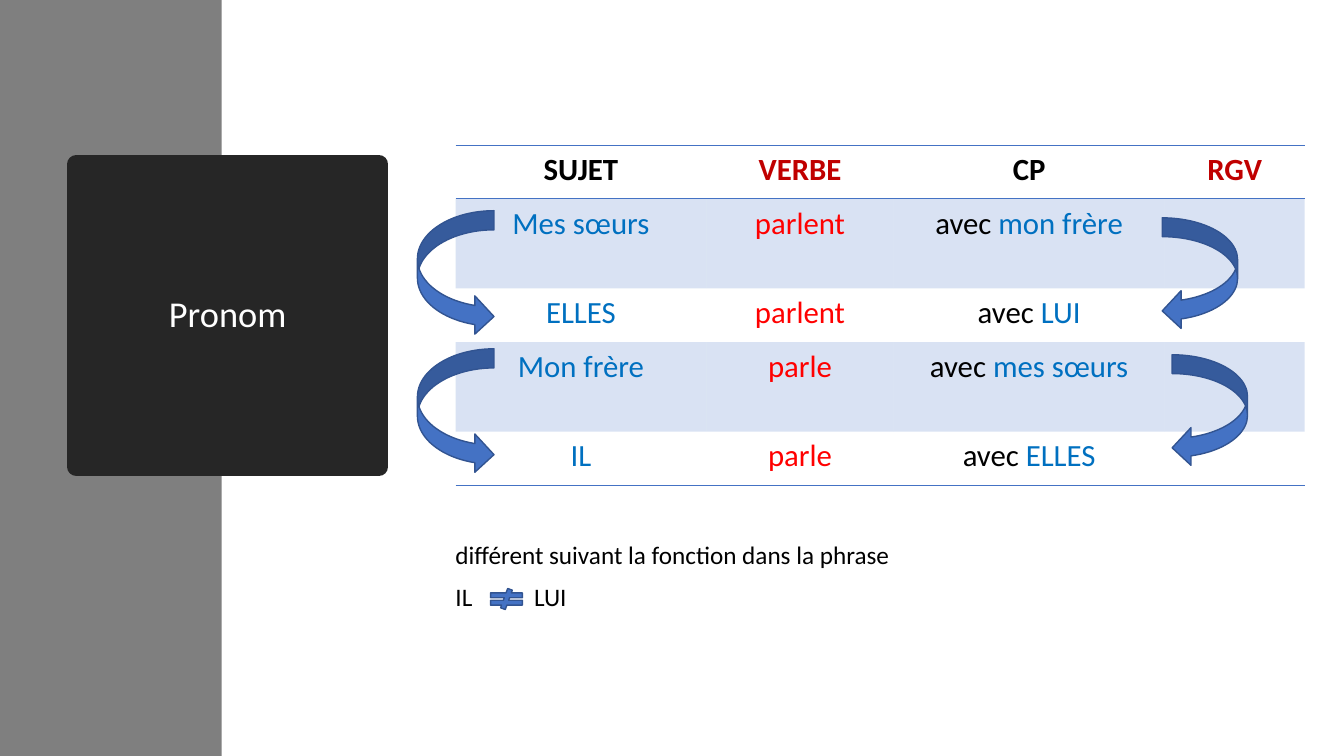
from lxml import etree
from pptx import Presentation
from pptx.dml.color import RGBColor
from pptx.enum.shapes import MSO_SHAPE
from pptx.enum.text import MSO_ANCHOR, PP_ALIGN
from pptx.oxml.ns import qn
from pptx.util import Cm, Pt

RECTANGLE = MSO_SHAPE.RECTANGLE
LEFT_ARROW = MSO_SHAPE.CURVED_LEFT_ARROW
RIGHT_ARROW = MSO_SHAPE.CURVED_RIGHT_ARROW
NOT_EQUAL = MSO_SHAPE.MATH_NOT_EQUAL
CENTER = PP_ALIGN.CENTER
LEFT = PP_ALIGN.LEFT
MIDDLE = MSO_ANCHOR.MIDDLE

GREY = RGBColor(0x7F, 0x7F, 0x7F)
DARK = RGBColor(0x26, 0x26, 0x26)
WHITE = RGBColor(0xFF, 0xFF, 0xFF)
BLACK = RGBColor(0, 0, 0)
ACCENT = RGBColor(0x44, 0x72, 0xC4)
OUTLINE = RGBColor(0x32, 0x54, 0x91)
BLUE = RGBColor(0x00, 0x70, 0xC0)
RED = RGBColor(0xFF, 0, 0)
DARK_RED = RGBColor(0xC0, 0, 0)

FONT = "Calibri"
PLAIN_TABLE_STYLE = "{2D5ABB26-0587-4C30-8999-92F81FD0307C}"
COLUMN_WIDTHS = (6.32, 4.72, 6.83, 3.53)
ROW_HEIGHTS = (1.35, 2.26, 1.35, 2.26, 1.35)
HEADINGS = (("SUJET", BLACK), ("VERBE", DARK_RED), ("CP", BLACK), ("RGV", DARK_RED))
SENTENCES = (
    ("Mes sœurs", "parlent", "mon frère"),
    ("ELLES", "parlent", "LUI"),
    ("Mon frère", "parle", "mes sœurs"),
    ("IL", "parle", "ELLES"),
)
NOTES = ("différent suivant la fonction dans la phrase", "IL\tLUI")


def format_run(run, size, color, bold=False):
    """Set the font of a run."""
    run.font.name = FONT
    run.font.size = Pt(size)
    run.font.bold = bold
    run.font.color.rgb = color


def add_filled_shape(slide, kind, box, fill, line=None, line_width=1):
    """Add a flat preset shape in a box given in centimetres."""
    shape = slide.shapes.add_shape(kind, *map(Cm, box))
    shape.shadow.inherit = False
    shape.fill.solid()
    shape.fill.fore_color.rgb = fill
    if line is None:
        shape.line.fill.background()
    else:
        shape.line.color.rgb = line
        shape.line.width = Pt(line_width)
    return shape


def add_title(slide, box):
    """Add the dark title block with its rounded outline."""
    shape = add_filled_shape(slide, RECTANGLE, box, DARK, DARK, 13.75)
    outline = shape.element.spPr.find(qn("a:ln"))
    etree.SubElement(outline, qn("a:round"))
    text_frame = shape.text_frame
    text_frame.text = "Pronom"
    text_frame.word_wrap = True
    text_frame.vertical_anchor = MIDDLE
    paragraph = text_frame.paragraphs[0]
    paragraph.alignment = CENTER
    paragraph.line_spacing = 0.9
    format_run(paragraph.runs[0], 26, WHITE)


def add_notes(slide, box):
    """Add the closing remark with its inequality sign."""
    left, top = box[:2]
    text_frame = slide.shapes.add_textbox(*map(Cm, box)).text_frame
    text_frame.word_wrap = True
    text_frame.text = "\n".join(NOTES)
    for paragraph in text_frame.paragraphs:
        paragraph.alignment = LEFT
        paragraph.line_spacing = 0.9
        paragraph.space_before = Pt(10)
        format_run(paragraph.runs[0], 18, BLACK)
    properties = text_frame.paragraphs[-1]._p.get_or_add_pPr()
    tabs = etree.SubElement(properties, qn("a:tabLst"))
    etree.SubElement(tabs, qn("a:tab"), pos=str(Cm(1.98)), algn="l")
    add_filled_shape(slide, NOT_EQUAL, (left + 0.99, top + 1.27, 1.09, 0.53), ACCENT, OUTLINE)


def add_border(cell, side):
    """Draw a thin accent border on the side of a cell."""
    border = etree.Element(qn(f"a:{side}"), w=str(Pt(1)))
    fill = etree.SubElement(border, qn("a:solidFill"))
    etree.SubElement(fill, qn("a:srgbClr"), val=str(ACCENT))
    cell._tc.get_or_add_tcPr().insert(0, border)


def style_cell(cell, row):
    """Set margins, shading and borders according to the row."""
    cell.margin_left = cell.margin_right = Cm(0.3)
    cell.margin_top = cell.margin_bottom = Cm(0.15)
    if row % 2:
        cell.fill.solid()
        cell.fill.fore_color.rgb = ACCENT
        color = cell._tc.tcPr.find(f".//{qn('a:srgbClr')}")
        etree.SubElement(color, qn("a:alpha"), val="20000")
    else:
        cell.fill.background()
    if row in (0, len(ROW_HEIGHTS) - 1):
        add_border(cell, "lnB")
    if row == 0:
        add_border(cell, "lnT")


def fill_cell(cell, parts, bold):
    """Write coloured text parts centred in a cell."""
    paragraph = cell.text_frame.paragraphs[0]
    paragraph.alignment = CENTER
    for text, color in parts:
        run = paragraph.add_run()
        run.text = text
        format_run(run, 22, color, bold)


def add_sentence_table(slide, left, top):
    """Add the table of sentences and the arrows from nouns to pronouns."""
    table = slide.shapes.add_table(
        len(ROW_HEIGHTS), len(COLUMN_WIDTHS), Cm(left), Cm(top),
        Cm(sum(COLUMN_WIDTHS)), Cm(sum(ROW_HEIGHTS))).table
    table._tbl.tblPr.find(qn("a:tableStyleId")).text = PLAIN_TABLE_STYLE
    for column, width in zip(table.columns, COLUMN_WIDTHS):
        column.width = Cm(width)
    rows = [[[heading] for heading in HEADINGS]]
    for subject, verb, complement in SENTENCES:
        rows.append([[(subject, BLUE)], [(verb, RED)],
                     [("avec ", BLACK), (complement, BLUE)], []])
    for index, (cells, height) in enumerate(zip(rows, ROW_HEIGHTS)):
        table.rows[index].height = Cm(height)
        for cell, parts in zip(table.rows[index].cells, cells):
            style_cell(cell, index)
            fill_cell(cell, parts, index == 0)

    arrows = (
        (LEFT_ARROW, 17.81, 1.83, 1.9, 2.82),
        (LEFT_ARROW, 18.06, 5.28, 1.9, 2.82),
        (RIGHT_ARROW, -0.96, 1.65, 1.93, 3.15),
        (RIGHT_ARROW, -0.96, 5.13, 1.93, 3.15),
    )
    for kind, across, down, width, height in arrows:
        add_filled_shape(slide, kind, (left + across, top + down, width, height), ACCENT, OUTLINE)


def main():
    """Build and save the slide."""
    presentation = Presentation()
    presentation.slide_width = Cm(33.87)
    presentation.slide_height = Cm(19.05)
    slide = presentation.slides.add_slide(presentation.slide_layouts[6])
    add_filled_shape(slide, RECTANGLE, (0, 0, 5.59, 19.05), GREY)
    add_title(slide, (1.93, 4.14, 7.62, 7.62))
    add_sentence_table(slide, 11.48, 3.66)
    add_notes(slide, (11.23, 13.56, 19.96, 3.58))
    presentation.save("out.pptx")


if __name__ == "__main__":
    main()
